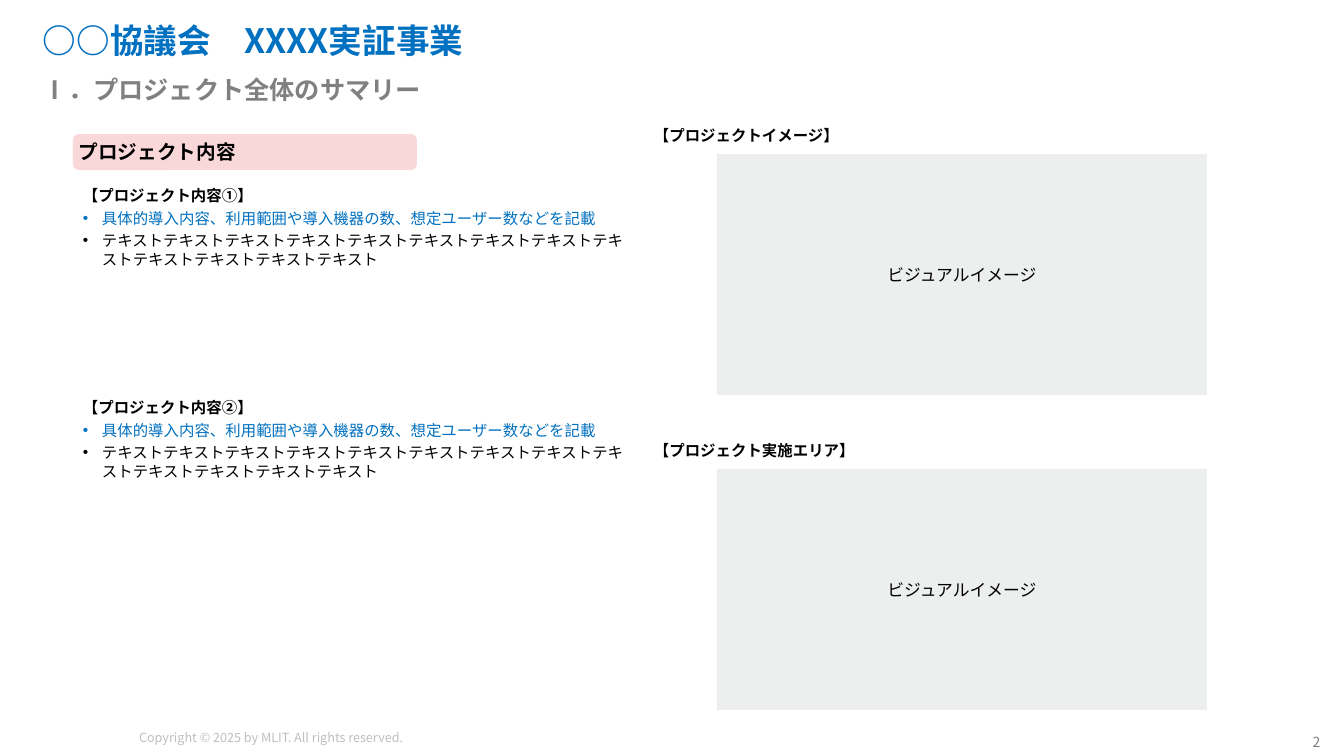
from pptx import Presentation
from pptx.dml.color import RGBColor
from pptx.enum.shapes import MSO_SHAPE as Shape
from pptx.enum.text import MSO_ANCHOR as Anchor, PP_ALIGN as Align
from pptx.oxml.ns import qn
from pptx.util import Pt
from lxml.etree import SubElement

FONT = "Noto Sans CJK JP"
BLACK, BLUE, GRAY, PALE_GRAY = "000000", "0070C0", "808080", "BFBFBF"
PINK, VISUAL_GRAY = "FAD8D9", "EDEEEE"

TITLE = "○○協議会　XXXX実証事業"
SUBTITLE = "Ⅰ．プロジェクト全体のサマリー"
SECTION = "プロジェクト内容"
GUIDE = "具体的導入内容、利用範囲や導入機器の数、想定ユーザー数などを記載"
BODY = "テキスト" * 13
CONTENTS = ["【プロジェクト内容①】", "【プロジェクト内容②】"]
VISUALS = ["【プロジェクトイメージ】", "【プロジェクト実施エリア】"]
VISUAL_LABEL = "ビジュアルイメージ"
COPYRIGHT = "Copyright © 2025 by MLIT. All rights reserved."
PAGE_NUMBER = "2"

EMU_PER_PX = 914400 / 100.8
CONTENT_TOP, CONTENT_STEP = 181, 212
VISUAL_TOP, VISUAL_STEP = 121, 315


def px(length):
    return round(length * EMU_PER_PX)


def color(value):
    return RGBColor.from_string(value)


def write(shape, lines, size, bold=False, align=Align.LEFT, anchor=Anchor.TOP,
          insets=(10, 5, 10, 5), wrap=True, spacing=None):
    frame = shape.text_frame
    frame.word_wrap = wrap
    frame.vertical_anchor = anchor
    (frame.margin_left, frame.margin_top,
     frame.margin_right, frame.margin_bottom) = map(px, insets)
    for index, (text, tint, bulleted) in enumerate(lines):
        paragraph = frame.add_paragraph() if index else frame.paragraphs[0]
        paragraph.text = text
        paragraph.alignment = align
        if spacing:
            paragraph.line_spacing = spacing
        if index:
            paragraph.space_before = Pt(3)
        if bulleted:
            props = paragraph._p.get_or_add_pPr()
            props.set("marL", str(px(19)))
            props.set("indent", str(px(-19)))
            SubElement(props, qn("a:buFont"), typeface="Arial")
            SubElement(props, qn("a:buChar"), char="•")
        font = paragraph.font
        font.size, font.bold, font.name = Pt(size), bold and not bulleted, FONT
        font.color.rgb = color(tint)
        SubElement(font._element, qn("a:ea"), typeface=FONT)


def text_box(box, lines, size, **style):
    write(slide.shapes.add_textbox(*map(px, box)), lines, size, **style)


def panel(kind, box, fill, text, size, **style):
    shape = slide.shapes.add_shape(kind, *map(px, box))
    shape.shadow.inherit = False
    shape.fill.solid()
    shape.fill.fore_color.rgb = color(fill)
    shape.line.fill.background()
    write(shape, [(text, BLACK, False)], size, anchor=Anchor.MIDDLE,
          insets=(4, 4, 4, 4), **style)


deck = Presentation()
deck.slide_width, deck.slide_height = px(1344), px(756)
slide = deck.slides.add_slide(deck.slide_layouts[6])

text_box((129, 725, 350, 25), [(COPYRIGHT, PALE_GRAY, False)], 9, wrap=False)
text_box((1301, 730, 31, 25), [(PAGE_NUMBER, GRAY, False)], 10,
         align=Align.CENTER, insets=(4, 4, 4, 4), wrap=False)
text_box((33, 74, 1278, 35), [(SUBTITLE, GRAY, False)], 18, bold=True,
         anchor=Anchor.MIDDLE, insets=(10, 0, 10, 5))
text_box((33, 20, 1278, 47), [(TITLE, BLUE, False)], 24, bold=True,
         anchor=Anchor.MIDDLE, spacing=0.8)
panel(Shape.ROUNDED_RECTANGLE, (73, 134, 344, 36), PINK, SECTION, 14, bold=True)

for row, heading in enumerate(CONTENTS):
    text_box((73, CONTENT_TOP + row * CONTENT_STEP, 562, 94),
             [(heading, BLACK, False), (GUIDE, BLUE, True), (BODY, BLACK, True)],
             11, bold=True)

for row, heading in enumerate(VISUALS):
    top = VISUAL_TOP + row * VISUAL_STEP
    text_box((644, top, 562, 29), [(heading, BLACK, False)], 11, bold=True)
    panel(Shape.RECTANGLE, (717, top + 33, 490, 241), VISUAL_GRAY, VISUAL_LABEL, 12,
          align=Align.CENTER)

deck.save("out.pptx")
